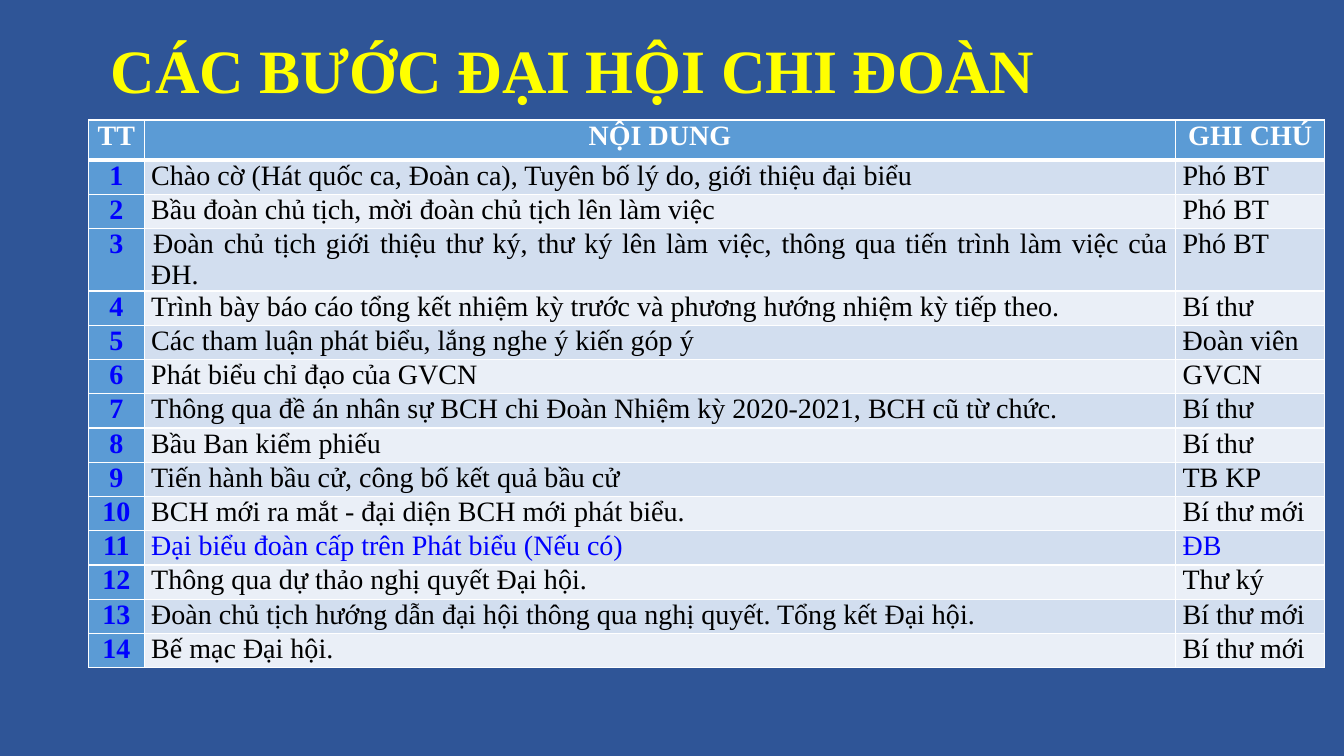
from dataclasses import dataclass

from lxml.etree import SubElement
from pptx import Presentation
from pptx.dml.color import RGBColor
from pptx.enum.text import MSO_ANCHOR as Anchor, MSO_AUTO_SIZE as AutoSize, PP_ALIGN as Align
from pptx.oxml.ns import qn
from pptx.slide import Slide
from pptx.table import _Cell as Cell
from pptx.text.text import TextFrame
from pptx.util import Inches, Pt

FONT = "Times New Roman"
COLOURS = {
    "background": "2F5597",
    "title": "FFFF00",
    "header": "5B9BD5",
    "odd": "D2DEEF",
    "even": "EAEFF7",
    "white": "FFFFFF",
    "black": "000000",
    "blue": "0000FF",
}
SLIDE_WIDTH, SLIDE_HEIGHT = Inches(13.33), Inches(7.5)
GRID_COLUMNS, GRID_ROWS = 1333, 750
COLUMN_SPANS = (55, 1023, 148)
HEADER_SPAN, STEP_SPAN = 40, 34
THIN, THICK = 1, 3
HEADINGS = ("TT", "NỘI DUNG", "GHI CHÚ")


@dataclass(frozen=True)
class Step:
    content: str
    person: str
    colour: str = "black"
    span: int = STEP_SPAN
    indent: int = 0


STEPS = [
    Step("Chào cờ (Hát quốc ca, Đoàn ca), Tuyên bố lý do, giới thiệu đại biểu", "Phó BT"),
    Step("Bầu đoàn chủ tịch, mời đoàn chủ tịch lên làm việc", "Phó BT"),
    Step("Đoàn chủ tịch giới thiệu thư ký, thư ký lên làm việc, thông qua tiến trình làm việc của ĐH.",
         "Phó BT", span=42, indent=2),
    Step("Trình bày báo cáo tổng kết nhiệm kỳ trước và phương hướng nhiệm kỳ tiếp theo.", "Bí thư"),
    Step("Các tham luận phát biểu, lắng nghe ý kiến góp ý", "Đoàn viên"),
    Step("Phát biểu chỉ đạo của GVCN", "GVCN"),
    Step("Thông qua đề án nhân sự BCH chi Đoàn Nhiệm kỳ 2020-2021, BCH cũ từ chức.", "Bí thư"),
    Step("Bầu Ban kiểm phiếu", "Bí thư"),
    Step("Tiến hành bầu cử, công bố kết quả bầu cử", "TB KP"),
    Step("BCH mới ra mắt - đại diện BCH mới phát biểu.", "Bí thư mới"),
    Step("Đại biểu đoàn cấp trên Phát biểu (Nếu có)", "ĐB", colour="blue"),
    Step("Thông qua dự thảo nghị quyết Đại hội.", "Thư ký"),
    Step("Đoàn chủ tịch hướng dẫn đại hội thông qua nghị quyết. Tổng kết Đại hội.", "Bí thư mới"),
    Step("Bế mạc Đại hội.", "Bí thư mới"),
]


def across(columns: float) -> int:
    return round(SLIDE_WIDTH * columns / GRID_COLUMNS)


def down(rows: float) -> int:
    return round(SLIDE_HEIGHT * rows / GRID_ROWS)


def rgb(name: str) -> RGBColor:
    return RGBColor.from_string(COLOURS[name])


def write(frame: TextFrame, text: str, *, size: int = 20, colour: str = "black", bold: bool = False,
          align: Align = Align.LEFT, spacing: float = 1.0, indent: int = 0) -> None:
    paragraph = frame.paragraphs[0]
    paragraph.alignment = align
    paragraph.line_spacing = spacing
    if indent:
        paragraph._p.get_or_add_pPr().set("indent", str(across(indent)))
    run = paragraph.add_run()
    run.text = text
    run.font.name = FONT
    run.font.size = Pt(size)
    run.font.bold = bold
    run.font.color.rgb = rgb(colour)


def format_cell(cell: Cell, fill: str, top: int = THIN, bottom: int = THIN) -> None:
    cell.margin_left = cell.margin_right = across(7)
    cell.margin_top = cell.margin_bottom = 0
    properties = cell._tc.get_or_add_tcPr()
    for side, width in {"L": THIN, "R": THIN, "T": top, "B": bottom}.items():
        line = SubElement(properties, qn(f"a:ln{side}"), w=str(Pt(width)))
        solid = SubElement(line, qn("a:solidFill"))
        SubElement(solid, qn("a:srgbClr"), val=COLOURS["white"])
    cell.fill.solid()
    cell.fill.fore_color.rgb = rgb(fill)


def add_title(slide: Slide, text: str) -> None:
    title = slide.shapes.title
    title.left, title.top = across(100), down(0)
    title.width, title.height = across(1150), down(145)
    frame = title.text_frame
    frame.word_wrap = True
    frame.auto_size = AutoSize.NONE
    frame.vertical_anchor = Anchor.MIDDLE
    write(frame, text, size=44, colour="title", bold=True, spacing=0.9)


def add_steps_table(slide: Slide) -> None:
    shape = slide.shapes.add_table(len(STEPS) + 1, len(HEADINGS), across(88), down(119),
                                   across(sum(COLUMN_SPANS)), down(550))
    table = shape.table
    for column, span in zip(table.columns, COLUMN_SPANS):
        column.width = across(span)
    table.rows[0].height = down(HEADER_SPAN)
    for index, heading in enumerate(HEADINGS):
        cell = table.cell(0, index)
        format_cell(cell, "header", bottom=THICK)
        write(cell.text_frame, heading, colour="white", bold=True, align=Align.CENTER)

    for number, step in enumerate(STEPS, start=1):
        table.rows[number].height = down(step.span)
        band = "odd" if number % 2 else "even"
        cells = [table.cell(number, index) for index in range(len(HEADINGS))]
        for cell, fill in zip(cells, ("header", band, band)):
            format_cell(cell, fill, top=THICK if number == 1 else THIN)
        number_cell, content_cell, person_cell = cells
        write(number_cell.text_frame, str(number), colour="blue", bold=True, align=Align.CENTER)
        write(content_cell.text_frame, step.content, colour=step.colour, align=Align.JUSTIFY,
              indent=step.indent)
        write(person_cell.text_frame, step.person, colour=step.colour)
    shape.height = down(550)


def main() -> None:
    presentation = Presentation()
    presentation.slide_width, presentation.slide_height = SLIDE_WIDTH, SLIDE_HEIGHT
    slide = presentation.slides.add_slide(presentation.slide_layouts.get_by_name("Title Only"))
    slide.background.fill.solid()
    slide.background.fill.fore_color.rgb = rgb("background")
    add_title(slide, "CÁC BƯỚC ĐẠI HỘI CHI ĐOÀN")
    add_steps_table(slide)
    presentation.save("out.pptx")


if __name__ == "__main__":
    main()
